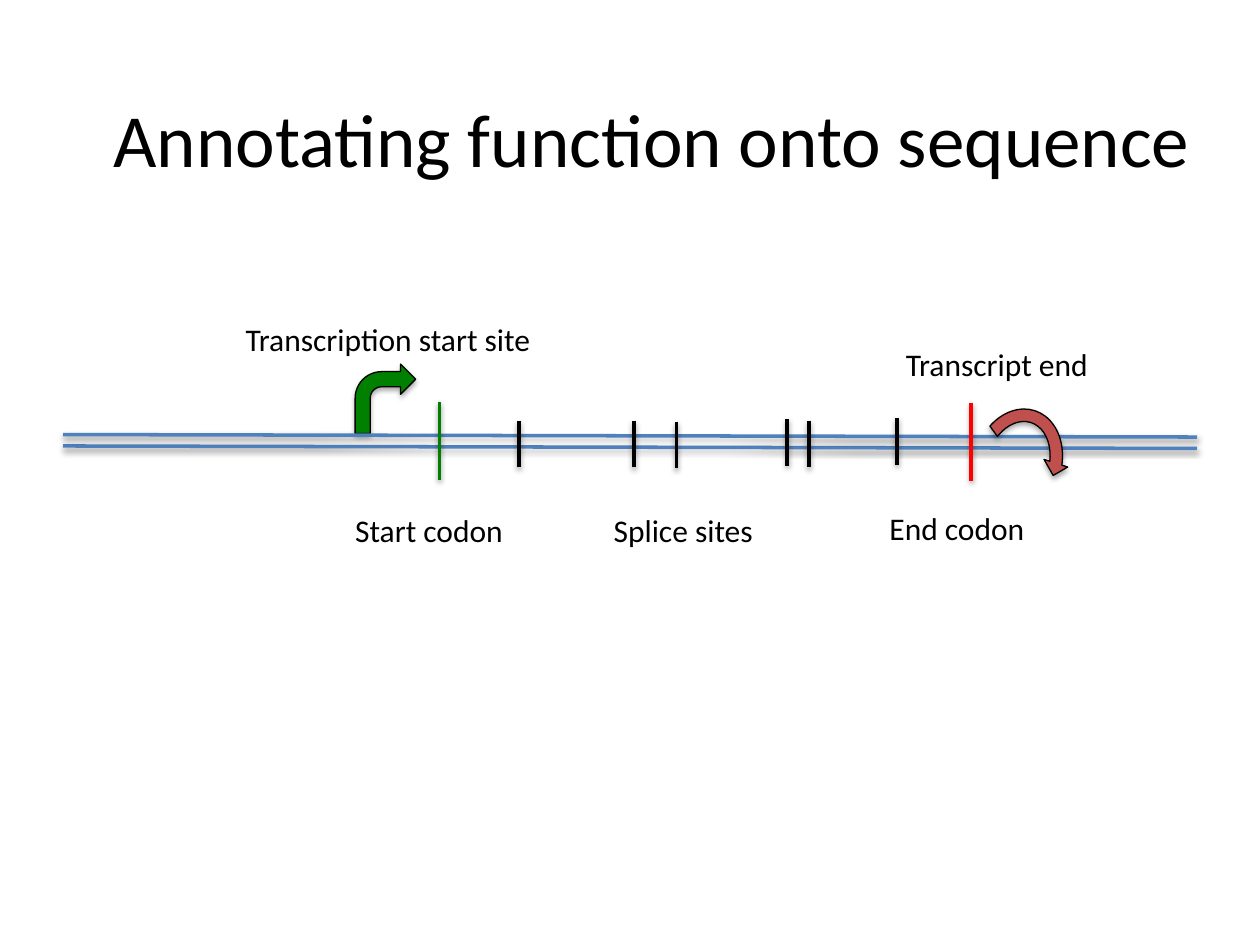
from lxml.etree import SubElement
from pptx import Presentation
from pptx.dml.color import RGBColor
from pptx.enum.shapes import MSO_CONNECTOR, MSO_SHAPE
from pptx.enum.text import MSO_ANCHOR, MSO_AUTO_SIZE, PP_ALIGN
from pptx.oxml.ns import qn
from pptx.util import Cm, Pt

COLOURS = {
    "ink": "000000",
    "strand": "4F81BD",
    "start": "008000",
    "end": "FF0000",
    "transcript_end": "C0504D",
}
STRAND_TOPS = (2.67, 2.44)
STRAND_DROP = 0.05
CODONS = ((7.59, 1.78, "start"), (18.31, 1.8, "end"))
CODON_HEIGHT = 1.57
SPLICE_SITES = (
    (9.19, 2.16),
    (11.51, 2.16),
    (12.37, 2.18),
    (14.6, 2.13),
    (15.04, 2.16),
    (16.81, 2.11),
)
SPLICE_HEIGHT = 0.94
LABELS = (
    ("Transcription start site", 3.43, 0, 6.81),
    ("Transcript end", 16.74, 0.51, 4.6),
    ("Start codon", 5.64, 3.86, 3.78),
    ("End codon", 16.41, 3.81, 3.58),
    ("Splice sites", 10.85, 3.86, 3.76),
)
LABEL_HEIGHT = 1.02


def colour(name):
    """Return the named colour."""
    return RGBColor.from_string(COLOURS[name])


def set_format(target, values):
    """Set each attribute of the target from a dict."""
    for name, value in values.items():
        setattr(target, name, value)


def add_shadow(shape, distance, opacity):
    """Give a shape or connector a soft shadow straight below it."""
    effects = SubElement(shape.element.spPr, qn("a:effectLst"))
    shadow = SubElement(
        effects,
        qn("a:outerShdw"),
        blurRad=str(Pt(3.1)),
        dist=str(Pt(distance)),
        dir="5400000",
        rotWithShape="0",
    )
    black = SubElement(shadow, qn("a:srgbClr"), val=COLOURS["ink"])
    SubElement(black, qn("a:alpha"), val=str(opacity * 1000))


def add_line(slide, start, end, colour_name):
    """Draw a shadowed line between two points in centimetres."""
    points = [Cm(value) for value in (*start, *end)]
    connector = slide.shapes.add_connector(MSO_CONNECTOR.STRAIGHT, *points)
    connector.line.color.rgb = colour(colour_name)
    connector.line.width = Pt(2)
    add_shadow(connector, 1.6, 38)


def add_arrow(slide, kind, box, colour_name):
    """Draw a filled, outlined block arrow and return it."""
    arrow = slide.shapes.add_shape(kind, *[Cm(value) for value in box])
    arrow.fill.solid()
    arrow.fill.fore_color.rgb = colour(colour_name)
    arrow.line.color.rgb = colour("ink")
    arrow.line.width = Pt(0.75)
    add_shadow(arrow, 1.8, 35)
    return arrow


def add_text(slide, box, text, size, frame_format, alignment=PP_ALIGN.LEFT):
    """Place one line of text in a box."""
    frame = slide.shapes.add_textbox(*[Cm(value) for value in box]).text_frame
    set_format(frame, frame_format)
    paragraph = frame.paragraphs[0]
    paragraph.alignment = alignment
    run = paragraph.add_run()
    run.text = text
    set_format(run.font, {"name": "Calibri", "size": Pt(size)})
    run.font.color.rgb = colour("ink")


def add_title(slide, box):
    """Place the centred slide title."""
    frame_format = {"word_wrap": True, "vertical_anchor": MSO_ANCHOR.MIDDLE}
    add_text(slide, box, "Annotating function onto sequence", 42.9,
             frame_format, PP_ALIGN.CENTER)


def add_gene_map(slide, left, top, width):
    """Draw the double strand with its sites, arrows and labels."""
    add_arrow(slide, MSO_SHAPE.BENT_ARROW,
              (left + 5.89, top + 1.02, 1.22, 1.4), "start")
    for strand_top in STRAND_TOPS:
        y = top + strand_top
        add_line(slide, (left, y), (left + width, y + STRAND_DROP), "strand")

    arrow = add_arrow(slide, MSO_SHAPE.CIRCULAR_ARROW,
                      (left + 18.24, top + 1.78, 2.01, 2.51), "transcript_end")
    arrow.rotation = 17.9
    for index, value in enumerate((0.125, 11.423, 204.577, 129.545, 0.125)):
        arrow.adjustments[index] = value

    marks = [(x, y, CODON_HEIGHT, name) for x, y, name in CODONS]
    marks += [(x, y, SPLICE_HEIGHT, "ink") for x, y in SPLICE_SITES]
    for x, y, height, name in marks:
        add_line(slide, (left + x, top + y), (left + x, top + y + height), name)

    frame_format = {"word_wrap": False, "auto_size": MSO_AUTO_SIZE.SHAPE_TO_FIT_TEXT}
    for text, x, y, label_width in LABELS:
        box = (left + x, top + y, label_width, LABEL_HEIGHT)
        add_text(slide, box, text, 18, frame_format)


def main():
    """Build and save the presentation."""
    presentation = Presentation()
    set_format(presentation, {"slide_width": Cm(25.4), "slide_height": Cm(19.05)})
    slide = presentation.slides.add_slide(presentation.slide_layouts[6])
    add_gene_map(slide, 1.27, 6.32, 22.86)
    add_title(slide, (1.7, 1.19, 22.86, 3.18))
    presentation.save("out.pptx")


if __name__ == "__main__":
    main()
